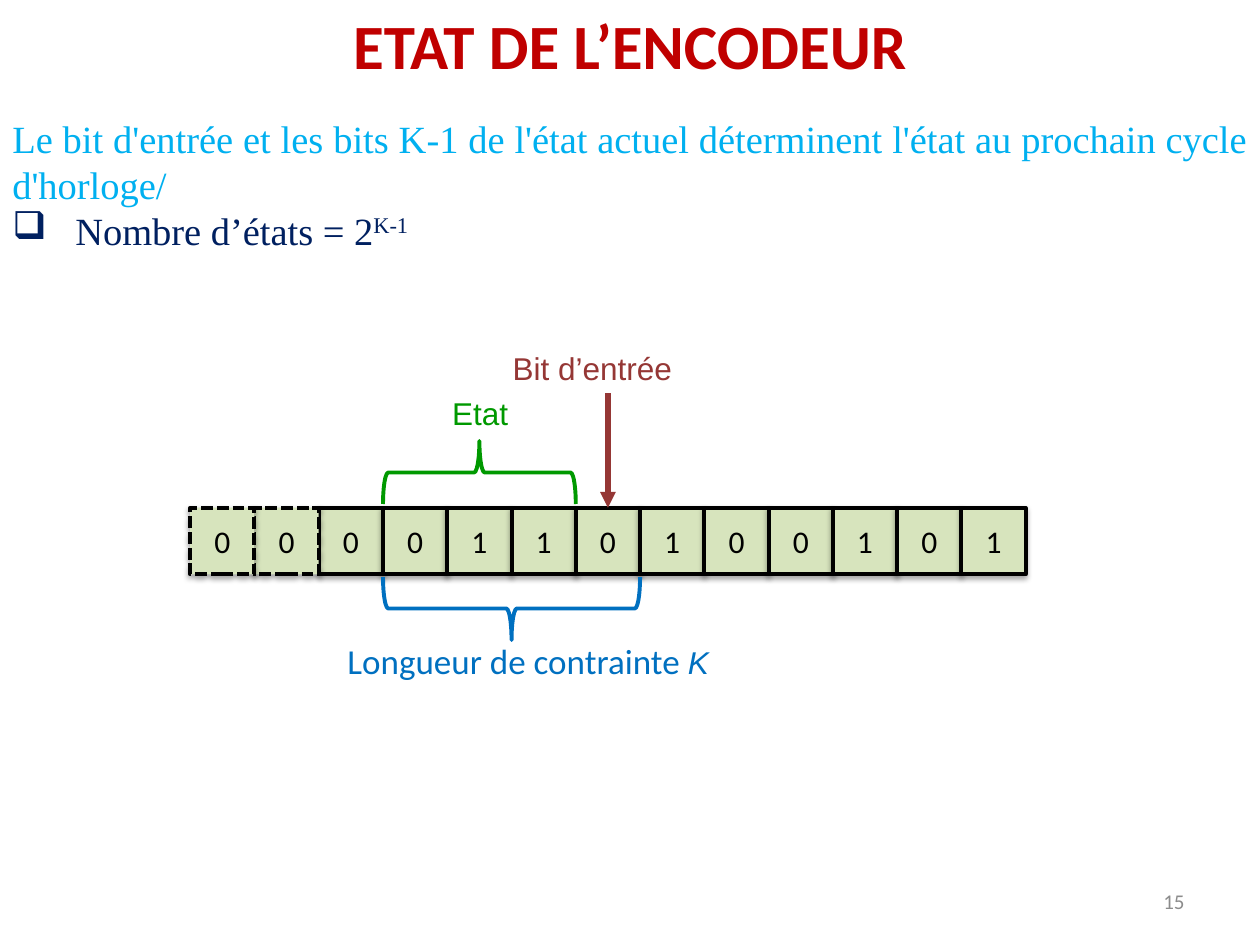
from pptx import Presentation
from pptx.dml.color import RGBColor
from pptx.enum.dml import MSO_LINE
from pptx.enum.shapes import MSO_CONNECTOR, MSO_SHAPE
from pptx.enum.text import MSO_ANCHOR, PP_ALIGN
from pptx.oxml.ns import qn
from pptx.util import Inches, Pt
from lxml import etree

RECT, BRACE = MSO_SHAPE.RECTANGLE, MSO_SHAPE.RIGHT_BRACE
STRAIGHT = MSO_CONNECTOR.STRAIGHT
DASH = MSO_LINE.SQUARE_DOT
MIDDLE, TOP = MSO_ANCHOR.MIDDLE, MSO_ANCHOR.TOP
LEFT, CENTER = PP_ALIGN.LEFT, PP_ALIGN.CENTER
RIGHT, JUSTIFY = PP_ALIGN.RIGHT, PP_ALIGN.JUSTIFY

COLORS = {
    "title": "C00000", "intro": "00B0F0", "count": "002060",
    "cell": "D7E4BD", "black": "000000", "state": "009900",
    "length": "0070C0", "input": "953735", "page": "8C8C8C",
}
BITS = "0000110100101"
PADS = 2  # leading bits drawn with a dashed border
ROW_X, ROW_Y, CELL_W, CELL_H = 1.51, 4.03, 0.51, 0.53
BRACE_H = 0.5


def color(name):
    return RGBColor.from_string(COLORS[name])


def node(parent, tag, **attrs):
    return etree.SubElement(parent, qn(tag), {k: str(v) for k, v in attrs.items()})


def write(para, text, size=18, font="Arial", ink="black", bold=None,
          italic=None, raised=0):
    """Add one run; raised is the superscript offset in percent."""
    run = para.add_run()
    run.text = text
    style = run.font
    style.size, style.name = Pt(size), font
    style.bold, style.italic = bold, italic
    style.color.rgb = color(ink)
    if raised:
        run._r.get_or_add_rPr().set("baseline", str(raised * 1000))


def bullet(para, mark, indent):
    props = para._p.get_or_add_pPr()
    props.set("marL", str(Inches(indent)))
    props.set("indent", str(-Inches(indent)))
    node(props, "a:buChar", char=mark)


class Page:
    """Holds the current slide and the shared line style."""

    def __init__(self, deck, width=2.25):
        self.slide = deck.slides.add_slide(deck.slide_layouts[6])
        self.shapes = self.slide.shapes
        self.width = width

    def text(self, x, y, w, h, align=LEFT, anchor=TOP, wrap=True):
        """Add a text box and return its first paragraph and frame."""
        box = self.shapes.add_textbox(Inches(x), Inches(y), Inches(w), Inches(h))
        frame = box.text_frame
        frame.word_wrap, frame.vertical_anchor = wrap, anchor
        para = frame.paragraphs[0]
        para.alignment = align
        return para, frame

    def shape(self, kind, x, y, w, h, ink):
        item = self.shapes.add_shape(kind, Inches(x), Inches(y), Inches(w), Inches(h))
        item.line.color.rgb = color(ink)
        item.line.width = Pt(self.width)
        item.shadow.inherit = False
        return item

    def cell(self, x, bit, dashed):
        item = self.shape(RECT, x, ROW_Y, CELL_W, CELL_H, "black")
        item.fill.solid()
        item.fill.fore_color.rgb = color("cell")
        if dashed:
            item.line.dash_style = DASH
        effects = item._element.spPr.find(qn("a:effectLst"))
        shade = node(effects, "a:outerShdw", blurRad=Pt(3.1), dist=Pt(1.8),
                     dir=90 * 60000, rotWithShape=0)
        tint = node(shade, "a:srgbClr", val=COLORS["black"])
        node(tint, "a:alpha", val=35000)
        frame = item.text_frame
        frame.vertical_anchor = MIDDLE
        para = frame.paragraphs[0]
        para.alignment = CENTER
        write(para, bit, font="Calibri")
        return item

    def brace(self, first, count, mid, turn, ink):
        """Span count cells from first, centred on height mid."""
        span = count * CELL_W
        center = ROW_X + first * CELL_W + span / 2
        item = self.shape(BRACE, center - BRACE_H / 2, mid - span / 2,
                          BRACE_H, span, ink)
        item.fill.background()
        item.rotation = turn

    def arrow(self, target, top, ink):
        """Point from height top down to the top side of target."""
        x = target.left + target.width // 2
        link = self.shapes.add_connector(STRAIGHT, x, target.top, x, Inches(top))
        link.begin_connect(target, 0)
        link.line.color.rgb = color(ink)
        link.line.width = Pt(3)
        node(link.line._get_or_add_ln(), "a:headEnd", type="triangle")
        node(link._element.spPr, "a:effectLst")


def main():
    deck = Presentation()
    deck.slide_width, deck.slide_height = Inches(10), Inches(7.5)
    page = Page(deck)

    para, _ = page.text(0, 0, 10, 0.71, CENTER)
    write(para, "ETAT DE L’ENCODEUR", 36, "Calibri", "title", bold=True)

    serif = {"size": 22, "font": "Times New Roman"}
    para, frame = page.text(0, 0.86, 10, 1.21, JUSTIFY)
    write(para, "Le bit d'entrée et les bits K-1 de l'état actuel déterminent "
          "l'état au prochain cycle d'horloge/", ink="intro", **serif)
    para = frame.add_paragraph()
    para.alignment = JUSTIFY
    bullet(para, "❑", 0.38)
    write(para, "\tNombre d’états = 2", ink="count", **serif)
    write(para, "K-1", ink="count", raised=30, **serif)

    cells = {}
    for i in [*range(PADS, len(BITS)), *reversed(range(PADS))]:
        cells[i] = page.cell(ROW_X + i * CELL_W, BITS[i], i < PADS)

    page.brace(3, 3, 3.75, 270, "state")
    para, _ = page.text(3.49, 3.08, 0.65, 0.4, wrap=False)
    write(para, "Etat", ink="state")

    page.brace(3, 4, 4.83, 90, "length")
    para, _ = page.text(2.66, 5.03, 3.1, 0.44, wrap=False)
    write(para, "Longueur de contrainte ", 20, "Calibri", "length")
    write(para, "K", ink="length", italic=True)

    page.arrow(cells[6], 3.12, "input")
    para, _ = page.text(3.97, 2.72, 1.72, 0.4)
    write(para, "Bit d’entrée", ink="input")

    para, _ = page.text(7.17, 6.95, 2.33, 0.4, RIGHT, MIDDLE)
    write(para, "15", 12, "Calibri", "page")

    deck.save("out.pptx")


if __name__ == "__main__":
    main()
